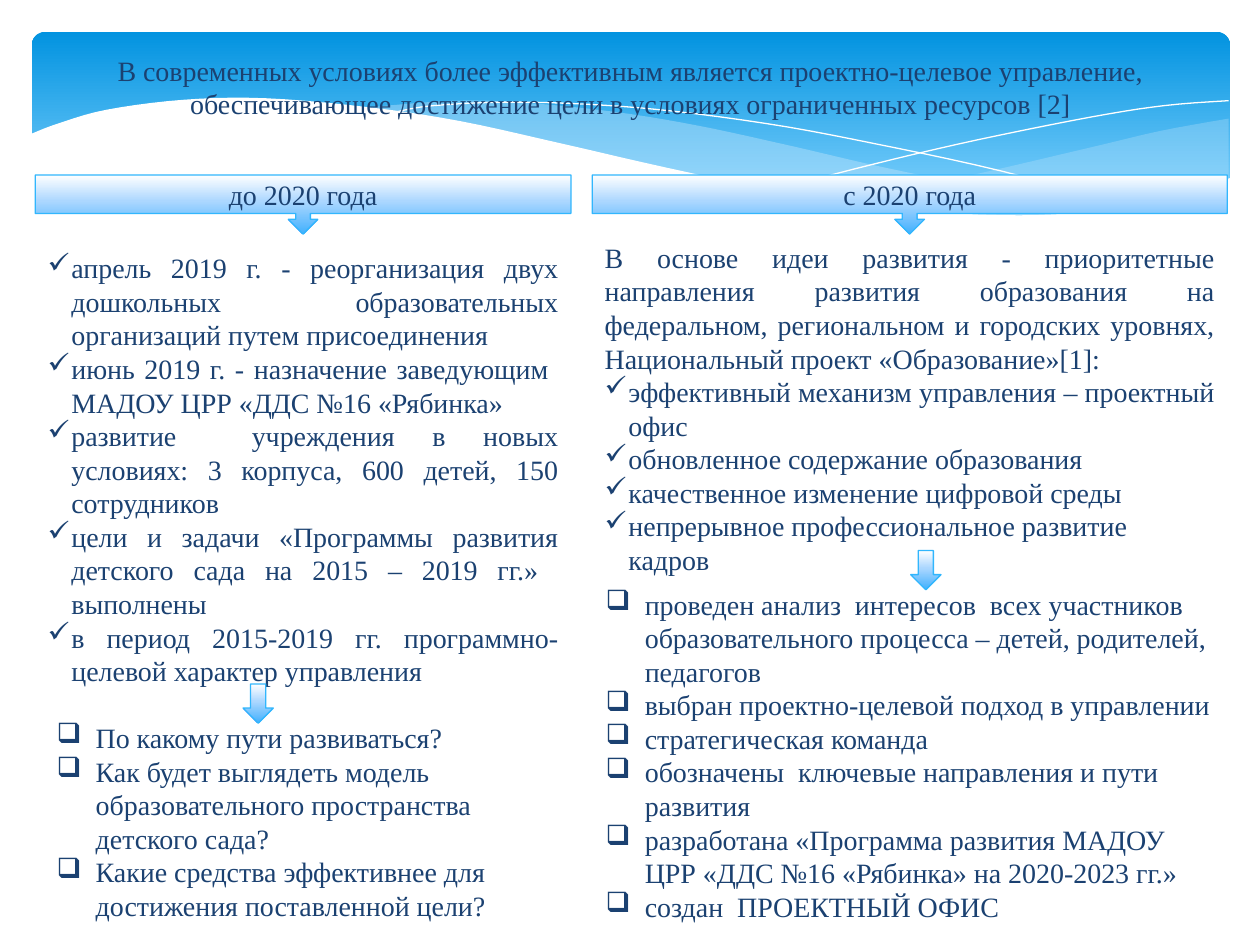
"""Builds a slide comparing kindergarten management before and after 2020."""
from lxml.etree import SubElement
from pptx import Presentation
from pptx.dml.color import RGBColor
from pptx.enum.shapes import MSO_SHAPE as Shape
from pptx.enum.text import MSO_ANCHOR as Anchor, MSO_AUTO_SIZE as AutoSize, PP_ALIGN as Align
from pptx.oxml.ns import qn
from pptx.util import Cm, Pt

FONT, TEXT_COLOR, LINE_COLOR = "Times New Roman", "1B4171", "31B6FD"
HEADER_STOPS = [(0, "0293E0"), (90, "83D3FE")]
SHAPE_STOPS = [(0, "FFFFFF"), (44, "ACD7FF"), (100, "42B0FD")]
INDENTS = {"✓": 0.48, "❑": 0.79}
TITLE = ("В современных условиях более эффективным является проектно-целевое управление, "
         "обеспечивающее достижение цели в условиях ограниченных ресурсов [2]")
CALLOUTS = [("до 2020 года", 0.71, 10.8), ("с 2020 года", 11.94, 12.8)]
ARROWS = [(18.36, 11.1), (4.9, 13.79)]

JUST, LEFT = Align.JUSTIFY, Align.LEFT
TEXTS = [
    ((0.71, 4.93, 10.8, 9.65), [
        ("✓", JUST, "апрель 2019 г. - реорганизация двух дошкольных образовательных организаций путем присоединения"),
        ("✓", JUST, "июнь 2019 г. - назначение заведующим  МАДОУ ЦРР «ДДС №16 «Рябинка»"),
        ("✓", JUST, "развитие  учреждения в новых условиях: 3 корпуса, 600 детей, 150 сотрудников"),
        ("✓", JUST, "цели и задачи «Программы развития детского сада на 2015 – 2019 гг.»  выполнены"),
        ("✓", JUST, "в период 2015-2019 гг. программно-целевой характер управления"),
    ]),
    ((0.89, 14.4, 9.8, 4.37), [
        ("❑", LEFT, "По какому пути развиваться?"),
        ("❑", LEFT, "Как будет выглядеть модель образовательного пространства детского сада?"),
        ("❑", LEFT, "Какие средства эффективнее для достижения поставленной цели?"),
    ]),
    ((11.94, 4.72, 12.8, 7.62), [
        (None, JUST, "В основе идеи развития - приоритетные направления развития образования на федеральном, "
                     "региональном и городских уровнях, Национальный проект «Образование»[1]:"),
        ("✓", JUST, "эффективный механизм управления – проектный офис"),
        ("✓", LEFT, "обновленное содержание образования"),
        ("✓", LEFT, "качественное изменение цифровой среды"),
        ("✓", LEFT, "непрерывное профессиональное развитие кадров"),
    ]),
    ((11.96, 11.71, 12.8, 7.34), [
        ("❑", LEFT, "проведен анализ  интересов  всех участников образовательного процесса – "
                    "детей, родителей,  педагогов"),
        ("❑", LEFT, "выбран проектно-целевой подход в управлении"),
        ("❑", LEFT, "стратегическая команда"),
        ("❑", LEFT, "обозначены  ключевые направления и пути развития"),
        ("❑", LEFT, "разработана «Программа развития МАДОУ ЦРР «ДДС №16 «Рябинка» на 2020-2023 гг.»"),
        ("❑", LEFT, "создан  ПРОЕКТНЫЙ ОФИС"),
    ]),
]

WAVES = [
    ("C6E7FC", 29, [
        [(24.77, 2.39), (23.39, 2.64), (21.87, 3), (19.13, 3.63), (16.79, 4.06)],
        [(16.79, 4.06), (18.26, 4.24), (19.84, 4.37), (21.21, 4.37), (22.58, 4.22), (23.75, 3.96), (24.77, 3.61)]]),
    ("C6E7FC", 40, [
        [(22.68, 4.24), (20.5, 3.91), (17.93, 3.4), (15.98, 2.95), (14.1, 2.54), (12.42, 2.26), (10.67, 2.08),
         (9.17, 2.03), (7.26, 2.18)],
        [(7.26, 2.18), (9.19, 2.46), (11.4, 2.95), (14.38, 3.63), (16.51, 4.01), (18.34, 4.27), (20.22, 4.39),
         (21.54, 4.37), (22.68, 4.24)]]),
    (None, 100, [
        [(7.85, 2.29), (8.74, 2.13), (10.57, 2.06), (12.95, 2.18), (15.44, 2.49), (17.65, 2.9), (20.19, 3.45),
         (23.04, 4.22)]]),
    (None, 100, [
        [(15.57, 3.84), (17.65, 3.3), (19.71, 2.82), (22, 2.36), (23.47, 2.13), (24.77, 2.03)]]),
    ("FFFFFF", 100, [
        [(24.82, 3.58), (23.62, 3.99), (22.23, 4.24), (20.55, 4.34), (18.44, 4.24), (15.9, 3.89), (13.44, 3.38),
         (11.35, 2.9), (9.27, 2.44), (7.42, 2.16), (5.36, 1.98), (3.71, 2.01), (2.16, 2.21), (1.17, 2.49), (0.58, 2.72)],
        [(0.58, 5.69), (24.82, 5.69)]]),
]


def color(hex_text):
    return RGBColor.from_string(hex_text)


def box(*lengths):
    return [Cm(length) for length in lengths]


def smooth(points, steps=5):
    """Returns a Catmull-Rom curve through the points."""
    padded = [points[0], *points, points[-1]]
    curve = [points[0]]
    for a, b, c, d in zip(padded, padded[1:], padded[2:], padded[3:]):
        for step in range(1, steps + 1):
            t = step / steps
            curve.append(tuple(
                (2 * q + (r - p) * t + (2 * p - 5 * q + 4 * r - s) * t ** 2 + (3 * q - p - 3 * r + s) * t ** 3) / 2
                for p, q, r, s in zip(a, b, c, d)))
    return curve


def add_wave(slide, fill, opacity, curves):
    points = [box(*point) for curve in curves for point in smooth(curve)]
    builder = slide.shapes.build_freeform(*points[0])
    builder.add_line_segments(points[1:], close=fill is not None)
    shape = builder.convert_to_shape()
    shape.shadow.inherit = False
    if fill is None:
        shape.fill.background()
        shape.line.color.rgb = color("FFFFFF")
        shape.line.width = Pt(0)
        return
    shape.fill.solid()
    shape.fill.fore_color.rgb = color(fill)
    shape.line.fill.background()
    if opacity < 100:
        srgb = shape.fill._xPr.find(".//" + qn("a:srgbClr"))
        SubElement(srgb, qn("a:alpha"), val=str(opacity * 1000))


def add_gradient_shape(slide, kind, place, stops, line=None):
    shape = slide.shapes.add_shape(kind, *box(*place))
    shape.shadow.inherit = False
    shape.fill.gradient()
    shape.fill.gradient_angle = 270
    stop_list = shape._element.spPr.find(".//" + qn("a:gsLst"))
    for old_stop in list(stop_list):
        stop_list.remove(old_stop)
    for position, hex_text in stops:
        stop = SubElement(stop_list, qn("a:gs"), pos=str(position * 1000))
        SubElement(stop, qn("a:srgbClr"), val=hex_text)
    if line:
        shape.line.color.rgb = color(line)
        shape.line.width = Pt(0.75)
    else:
        shape.line.fill.background()
    return shape


def write(paragraph, text, align, bullet=None):
    paragraph.alignment = align
    run = paragraph.add_run()
    run.text = text
    run.font.size, run.font.name = Pt(16), FONT
    run.font.color.rgb = color(TEXT_COLOR)
    if bullet:
        properties = paragraph._p.get_or_add_pPr()
        indent = Cm(INDENTS[bullet])
        properties.set("marL", str(indent))
        properties.set("indent", str(-indent))
        SubElement(properties, qn("a:buChar"), char=bullet)


def add_list(slide, place, items):
    frame = slide.shapes.add_textbox(*box(*place)).text_frame
    frame.word_wrap = True
    frame.auto_size = AutoSize.SHAPE_TO_FIT_TEXT
    for index, (bullet, align, text) in enumerate(items):
        paragraph = frame.add_paragraph() if index else frame.paragraphs[0]
        write(paragraph, text, align, bullet)


def place_title(slide):
    title = slide.shapes.title
    title.left, title.top, title.width, title.height = box(0.71, 0.84, 24, 2.49)
    frame = title.text_frame
    frame.vertical_anchor = Anchor.TOP
    frame.margin_top = Cm(0.23)
    write(frame.paragraphs[0], TITLE, Align.CENTER)
    slide.shapes._spTree.append(title._element)


def main():
    presentation = Presentation()
    presentation.slide_width, presentation.slide_height = box(25.4, 19.05)
    slide = presentation.slides.add_slide(presentation.slide_layouts[5])
    header = add_gradient_shape(slide, Shape.ROUNDED_RECTANGLE, (0.64, 0.64, 24.16, 3.96), HEADER_STOPS)
    header.adjustments[0] = 0.07
    for wave in WAVES:
        add_wave(slide, *wave)
    for text, left, width in CALLOUTS:
        callout = add_gradient_shape(slide, Shape.DOWN_ARROW_CALLOUT, (left, 3.53, width, 1.19), SHAPE_STOPS, LINE_COLOR)
        frame = callout.text_frame
        frame.margin_top = frame.margin_bottom = 0
        frame.vertical_anchor = Anchor.MIDDLE
        write(frame.paragraphs[0], text, Align.CENTER)
    place_title(slide)
    for place, items in TEXTS:
        add_list(slide, place, items)
    for left, top in ARROWS:
        add_gradient_shape(slide, Shape.DOWN_ARROW, (left, top, 0.61, 0.79), SHAPE_STOPS, LINE_COLOR)
    presentation.save("out.pptx")


if __name__ == "__main__":
    main()
